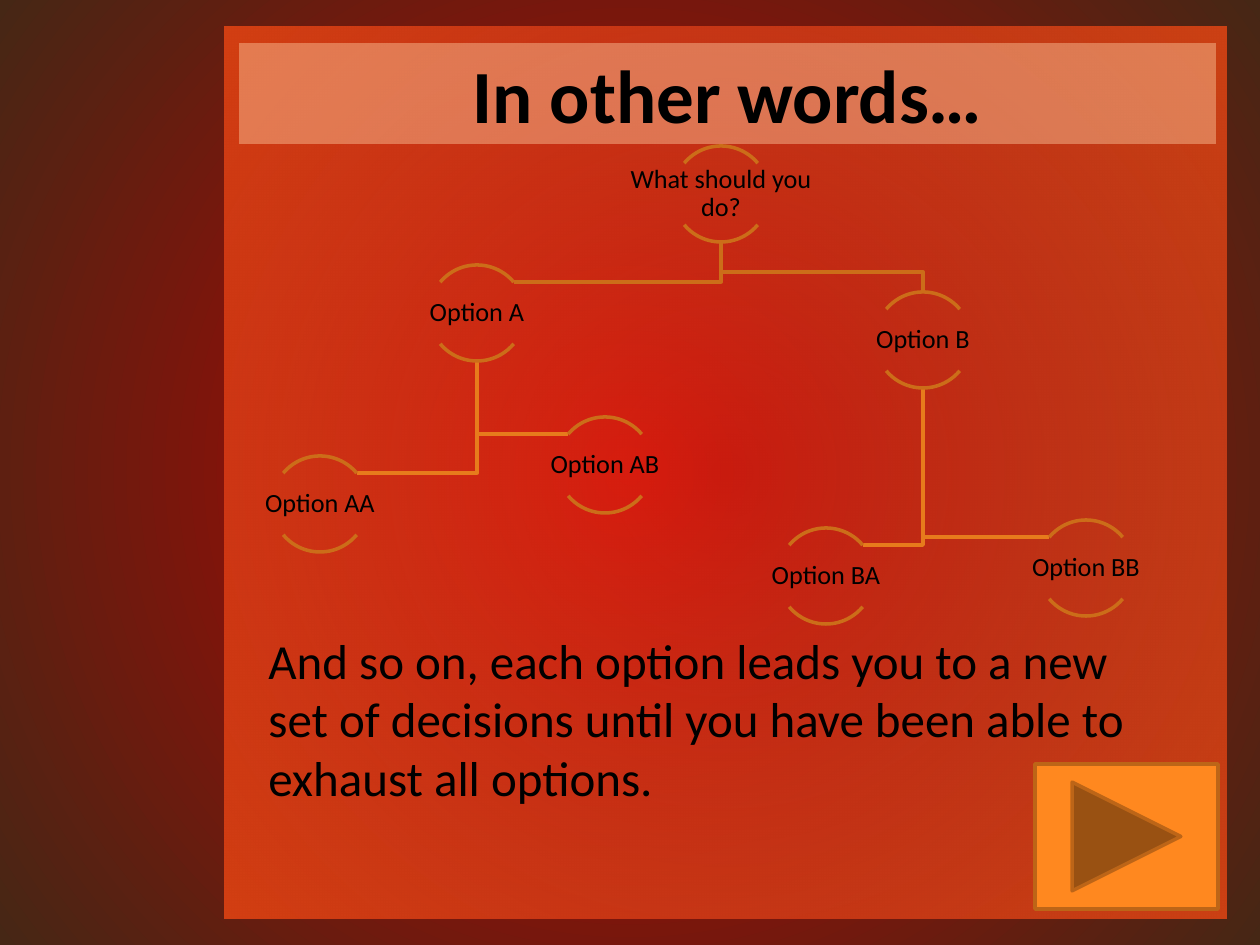
from lxml.etree import SubElement
from pptx import Presentation
from pptx.dml.color import RGBColor
from pptx.enum.shapes import MSO_SHAPE as SHAPE
from pptx.enum.text import MSO_ANCHOR as ANCHOR, MSO_AUTO_SIZE as AUTO, PP_ALIGN as ALIGN
from pptx.oxml.ns import qn
from pptx.util import Pt

PX = 914400 / 126
BLACK = RGBColor(0x00, 0x00, 0x00)
DEEP_RED = RGBColor(0xC0, 0x00, 0x00)
BROWN = RGBColor(0x46, 0x27, 0x15)
CORAL = RGBColor(0xFF, 0x51, 0x2C)
VERMILION = RGBColor(0xFF, 0x4C, 0x14)
PEACH = RGBColor(0xFF, 0xCF, 0xA5)
ORANGE = RGBColor(0xFF, 0x88, 0x1F)
BRONZE = RGBColor(0xBD, 0x65, 0x17)
ARC_LINE = RGBColor(0xCC, 0x6D, 0x19)
BRANCH_LINE = RGBColor(0xE7, 0x7B, 0x1C)

CIRCLE = 96
LABEL_W, LABEL_H = 190, 60
ARC_DX, ARC_DY = 37, 17  # arc end: sideways from the centre, down from the top
ARCS = ((132, 192), (24, 84))

# name: (label, centre x, top), relative to the diagram box
NODES = {
    "root": ("What should you do?", 495, 0),
    "B": ("Option B", 697, 146),
    "BA": ("Option BA", 600, 382),
    "BB": ("Option BB", 860, 374),
    "A": ("Option A", 251, 119),
    "AB": ("Option AB", 379, 271),
    "AA": ("Option AA", 94, 310),
}
# parent, child, colour, whether the line enters the child from above
BRANCHES = (
    ("A", "AA", BRANCH_LINE, False),
    ("A", "AB", BRANCH_LINE, False),
    ("root", "A", ARC_LINE, False),
    ("B", "BB", BRANCH_LINE, False),
    ("B", "BA", BRANCH_LINE, False),
    ("root", "B", ARC_LINE, True),
)
CLOSING = ("And so on, each option leads you to a new set of decisions "
           "until you have been able to exhaust all options.")


def emu(*lengths):
    return [round(v * PX) for v in lengths]


def set_alpha(colour, percent):
    SubElement(colour, qn("a:alpha")).set("val", str(percent * 1000))


def fill_radial(fill, element, colours, alphas=()):
    """Fill from the centre outwards; element is the XML that holds the fill."""
    fill.gradient()
    for stop, colour in zip(fill.gradient_stops, colours):
        stop.color.rgb = colour
    grad = element.find(".//" + qn("a:gradFill"))
    for colour, alpha in zip(grad.iter(qn("a:srgbClr")), alphas):
        set_alpha(colour, alpha)
    grad.remove(grad.find(qn("a:lin")))
    centre = SubElement(SubElement(grad, qn("a:path"), {"path": "circle"}), qn("a:fillToRect"))
    for side in "ltrb":
        centre.set(side, "50000")


def set_line(sp, colour):
    sp.shadow.inherit = False
    sp.line.color.rgb = colour
    sp.line.width = Pt(2)


def write(tf, text, align=None, anchor=None, **font):
    tf.word_wrap = True
    tf.vertical_anchor = anchor
    p = tf.paragraphs[0]
    p.alignment = align
    r = p.add_run()
    r.text = text
    r.font.color.rgb = BLACK
    for name, value in {"name": "Calibri", **font}.items():
        setattr(r.font, name, value)
    return p


def add_panel(slide, x, y, w, h):
    sp = slide.shapes.add_shape(SHAPE.RECTANGLE, *emu(x, y, w, h))
    sp.shadow.inherit = False
    sp.line.fill.background()
    fill_radial(sp.fill, sp._element, (CORAL, VERMILION), (30, 72))


def add_title(slide, x, y, w, h):
    title = slide.shapes.title
    title.left, title.top, title.width, title.height = emu(x, y, w, h)
    title.fill.solid()
    title.fill.fore_color.rgb = PEACH
    set_alpha(title._element.find(".//" + qn("a:srgbClr")), 43)
    write(title.text_frame, "In other words…", ALIGN.CENTER, ANCHOR.MIDDLE,
          size=Pt(42.9), bold=True)


def add_branch(group, x, y, parent, child, colour, from_above):
    _, px, py = NODES[parent]
    _, cx, cy = NODES[child]
    start = (x + px, y + py + CIRCLE)
    if from_above:
        bend = y + cy - 20
        points = [(x + px, bend), (x + cx, bend), (x + cx, y + cy)]
    else:
        bend = y + cy + ARC_DY
        end = cx + (ARC_DX if cx < px else -ARC_DX)
        points = [(x + px, bend), (x + end, bend)]
    builder = group.shapes.build_freeform(*start, scale=PX)
    builder.add_line_segments(points, close=False)
    sp = builder.convert_to_shape()
    sp.fill.background()
    set_line(sp, colour)


def add_node(group, cx, top, label):
    for angles in ARCS:
        arc = group.shapes.add_shape(SHAPE.ARC, *emu(cx - CIRCLE / 2, top, CIRCLE, CIRCLE))
        arc.adjustments[0], arc.adjustments[1] = angles
        arc.fill.background()
        set_line(arc, ARC_LINE)
    box = group.shapes.add_textbox(
        *emu(cx - LABEL_W / 2, top + (CIRCLE - LABEL_H) / 2, LABEL_W, LABEL_H))
    tf = box.text_frame
    for side in ("left", "top", "right", "bottom"):
        setattr(tf, f"margin_{side}", Pt(0.75))
    write(tf, label, ALIGN.CENTER, ANCHOR.MIDDLE, size=Pt(15)).line_spacing = 0.9


def add_decision_tree(slide, x, y):
    group = slide.shapes.add_group_shape()
    for branch in BRANCHES:
        add_branch(group, x, y, *branch)
    for label, cx, top in NODES.values():
        add_node(group, x + cx, y + top, label)


def add_closing_text(slide, x, y, w, h):
    tf = slide.shapes.add_textbox(*emu(x, y, w, h)).text_frame
    write(tf, CLOSING, size=Pt(28))
    tf.auto_size = AUTO.SHAPE_TO_FIT_TEXT


def add_next_button(slide, x, y, w, h):
    sp = slide.shapes.add_shape(SHAPE.ACTION_BUTTON_FORWARD_OR_NEXT, *emu(x, y, w, h))
    sp.fill.solid()
    sp.fill.fore_color.rgb = ORANGE
    set_line(sp, BRONZE)


def main():
    prs = Presentation()
    prs.slide_width, prs.slide_height = emu(1260, 945)
    slide = prs.slides.add_slide(prs.slide_layouts[5])
    fill_radial(slide.background.fill, slide._element, (DEEP_RED, BROWN))
    add_panel(slide, 224, 27, 1002, 892)
    # The title sits above the panel
    tree = slide.shapes._spTree
    tree.append(slide.shapes.title._element)
    add_title(slide, 239, 43, 977, 101)
    add_decision_tree(slide, 226, 146)
    add_closing_text(slide, 256, 624, 911, 190)
    add_next_button(slide, 1035, 764, 183, 145)
    prs.save("out.pptx")


if __name__ == "__main__":
    main()
